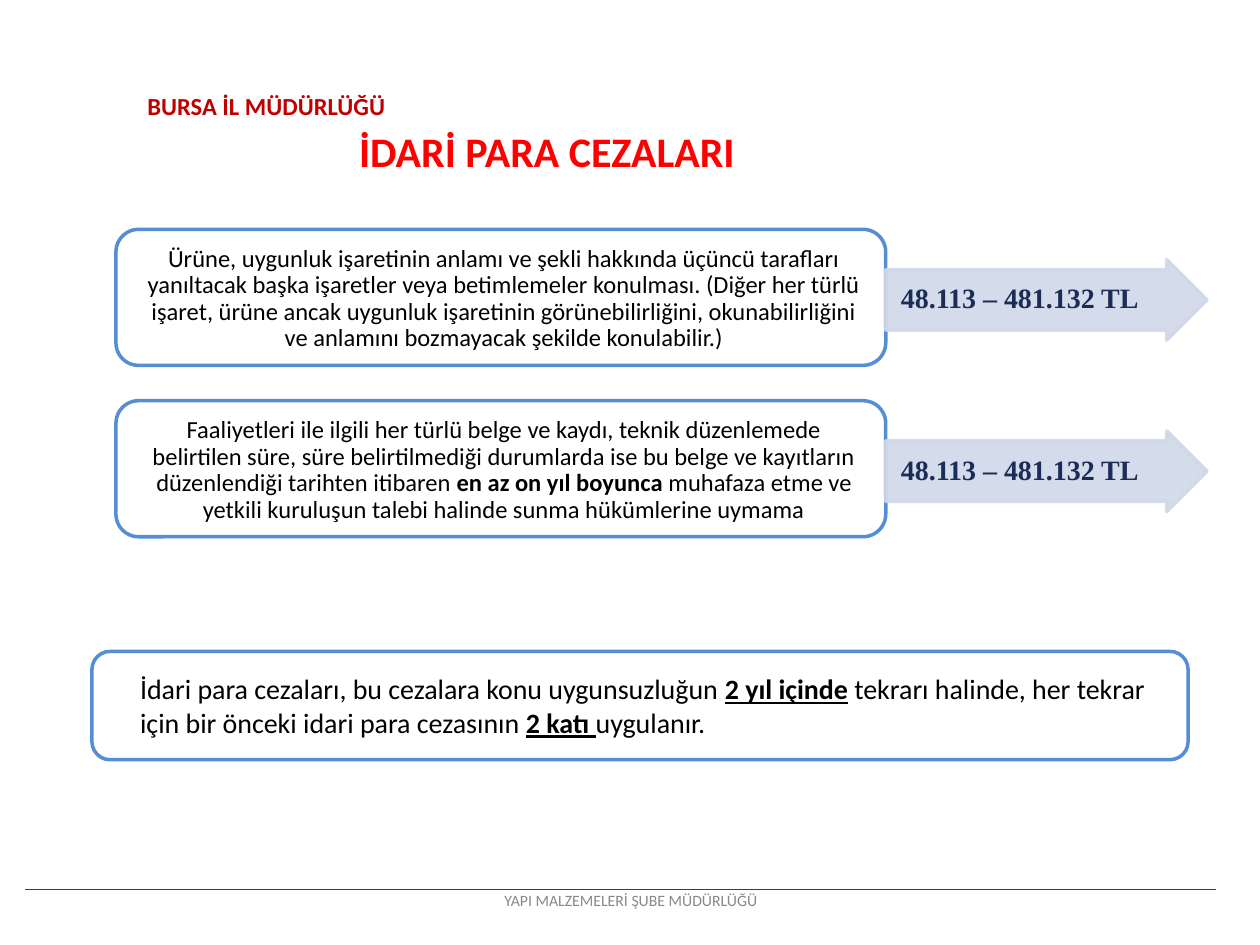
from dataclasses import dataclass

from lxml.etree import SubElement
from pptx import Presentation
from pptx.dml.color import RGBColor
from pptx.enum.shapes import MSO_CONNECTOR, MSO_SHAPE
from pptx.enum.text import MSO_ANCHOR, PP_ALIGN
from pptx.oxml.ns import qn
from pptx.util import Inches, Pt


@dataclass(frozen=True)
class Theme:
    """Colours, fonts and type sizes of the slide."""
    body_font: str = "Calibri"
    amount_font: str = "Times New Roman"
    text: str = "000000"
    title: str = "FF0000"
    office: str = "C00000"
    outline: str = "558ED5"
    arrow: str = "D0D8E8"
    amount: str = "1B2C57"
    rule: str = "333E50"
    footer: str = "888888"
    title_size: int = 24
    large_size: int = 16
    body_size: int = 14
    footer_size: int = 9


THEME = Theme()
AMOUNT = "48.113 – 481.132 TL"
VIOLATIONS = [
    [("Ürüne, uygunluk işaretinin anlamı ve şekli hakkında üçüncü tarafları "
      "yanıltacak başka işaretler veya betimlemeler konulması. (Diğer her türlü "
      "işaret, ürüne ancak uygunluk işaretinin görünebilirliğini, okunabilirliğini "
      "ve anlamını bozmayacak şekilde konulabilir.)", "")],
    [("Faaliyetleri ile ilgili her türlü belge ve kaydı, teknik düzenlemede "
      "belirtilen süre, süre belirtilmediği durumlarda ise bu belge ve kayıtların "
      "düzenlendiği tarihten itibaren ", ""),
     ("en az on yıl boyunca", "b"),
     (" muhafaza etme ve yetkili kuruluşun talebi halinde sunma hükümlerine "
      "uymama", "")],
]
REPEAT_RULE = [
    ("İdari para cezaları, bu cezalara konu uygunsuzluğun ", ""),
    ("2 yıl içinde", "bu"),
    (" tekrarı halinde, her tekrar için bir önceki idari para cezasının ", ""),
    ("2 katı ", "bu"),
    ("uygulanır.", ""),
]


def write(shape, runs, size, color, font=THEME.body_font, align=PP_ALIGN.LEFT,
          anchor=MSO_ANCHOR.MIDDLE, insets=(0, 0, 0, 0), line_spacing=None):
    """Fill a shape with one paragraph of (text, style) runs."""
    frame = shape.text_frame
    frame.word_wrap = True
    frame.vertical_anchor = anchor
    (frame.margin_left, frame.margin_top,
     frame.margin_right, frame.margin_bottom) = map(Inches, insets)
    paragraph = frame.paragraphs[0]
    paragraph.alignment = align
    paragraph.line_spacing = line_spacing
    for text, style in runs:
        run = paragraph.add_run()
        run.text = text
        run.font.name = font
        run.font.size = Pt(size)
        run.font.bold = "b" in style
        run.font.underline = "u" in style
        run.font.color.rgb = RGBColor.from_string(color)


def add_label(slide, left, top, width, height, text, size, color, style="",
              **layout):
    """Add a text box without margins, anchored at the top."""
    box = slide.shapes.add_textbox(*map(Inches, (left, top, width, height)))
    write(box, [(text, style)], size, color, anchor=MSO_ANCHOR.TOP, **layout)


def add_panel(slide, left, top, width, height):
    """Add an outlined rounded rectangle without fill."""
    panel = slide.shapes.add_shape(
        MSO_SHAPE.ROUNDED_RECTANGLE, *map(Inches, (left, top, width, height)))
    panel.shadow.inherit = False
    panel.fill.background()
    panel.line.color.rgb = RGBColor.from_string(THEME.outline)
    panel.line.width = Pt(2)
    return panel


def add_amount_arrow(slide, left, top, width, height):
    """Add a translucent arrow that holds the amount of the fine."""
    arrow = slide.shapes.add_shape(
        MSO_SHAPE.RIGHT_ARROW, *map(Inches, (left, top, width, height)))
    arrow.adjustments[0] = 0.75
    arrow.adjustments[1] = 0.5
    arrow.shadow.inherit = False
    arrow.fill.solid()
    arrow.fill.fore_color.rgb = RGBColor.from_string(THEME.arrow)
    arrow.line.color.rgb = RGBColor.from_string(THEME.arrow)
    arrow.line.width = Pt(2)
    for color in list(arrow.element.spPr.iter(qn("a:srgbClr"))):
        SubElement(color, qn("a:alpha"), val="90000")
    write(arrow, [(AMOUNT, "b")], THEME.large_size, THEME.amount,
          font=THEME.amount_font, insets=(0.12, 0, 0.1, 0), line_spacing=0.9)


def add_header(slide, left, top, width):
    """Add the office name and the slide title below it."""
    add_label(slide, left, top, width, 0.25, "BURSA İL MÜDÜRLÜĞÜ",
              THEME.body_size, THEME.office, "b")
    add_label(slide, left + 1.68, top + 0.28, width, 0.4, "İDARİ PARA CEZALARI",
              THEME.title_size, THEME.title, "b")


def add_violation(slide, left, top, width, height, runs):
    """Add a violation panel with its fine in an arrow at the right."""
    panel_width, arrow_height = 6.11, 0.64
    panel = add_panel(slide, left, top, panel_width, height)
    write(panel, runs, THEME.body_size, THEME.text, align=PP_ALIGN.CENTER,
          insets=(0.18, 0.08, 0.13, 0.05), line_spacing=0.9)
    add_amount_arrow(slide, left + panel_width,
                     top + (height - arrow_height) / 2 + 0.02,
                     width - panel_width, arrow_height)


def add_repeat_rule(slide, left, top, width, height):
    """Add the panel on repeated violations."""
    panel = add_panel(slide, left, top, width, height)
    write(panel, REPEAT_RULE, THEME.large_size, THEME.text,
          insets=(0.34, 0.05, 0.13, 0.05))


def add_footer(slide, left, top, width):
    """Add the footer rule and the centred department name."""
    rule = slide.shapes.add_connector(
        MSO_CONNECTOR.STRAIGHT, Inches(left), Inches(top),
        Inches(left + width), Inches(top))
    rule.line.color.rgb = RGBColor.from_string(THEME.rule)
    rule.line.width = Pt(0.48)
    SubElement(rule.element.spPr, qn("a:effectLst"))
    add_label(slide, left + 3.48, top + 0.03, 2.65, 0.14,
              "YAPI MALZEMELERİ ŞUBE MÜDÜRLÜĞÜ", THEME.footer_size, THEME.footer,
              align=PP_ALIGN.CENTER, line_spacing=Pt(9.6))


def main():
    """Build and save the slide on administrative fines."""
    presentation = Presentation()
    presentation.slide_width = Inches(10)
    presentation.slide_height = Inches(7.5)
    slide = presentation.slides.add_slide(presentation.slide_layouts[6])
    add_footer(slide, 0.2, 7.06, 9.45)
    for index, runs in enumerate(VIOLATIONS):
        add_violation(slide, 0.92, 1.82 + index * 1.36, 8.66, 1.08, runs)
    add_repeat_rule(slide, 0.73, 5.17, 8.7, 0.86)
    add_header(slide, 1.17, 0.72, 5)
    presentation.save("out.pptx")


if __name__ == "__main__":
    main()
